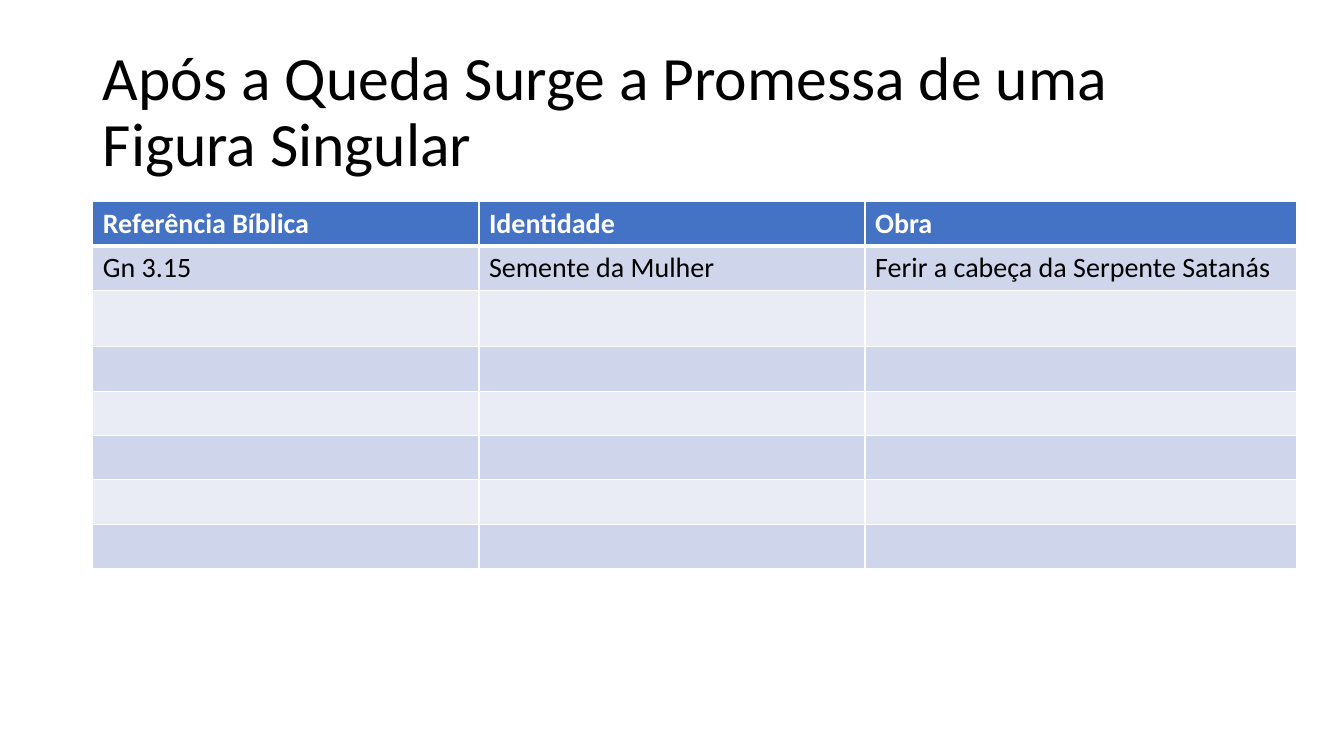
from lxml import etree
from pptx import Presentation
from pptx.dml.color import RGBColor
from pptx.enum.text import MSO_ANCHOR, PP_ALIGN
from pptx.oxml.ns import qn
from pptx.util import Inches, Pt

MIDDLE = MSO_ANCHOR.MIDDLE
LEFT = PP_ALIGN.LEFT
TITLE_ONLY = 5
FONT = "Calibri"
COLORS = {
    "text": "000000",
    "header_text": "FFFFFF",
    "header": "4472C4",
    "odd_row": "CFD5EA",
    "even_row": "E9EBF5",
    "border": "FFFFFF",
}

TITLE = "Após a Queda Surge a Promessa de uma Figura Singular"
HEADINGS = ["Referência Bíblica", "Identidade", "Obra"]
PROMISE = ["Gn 3.15", "Semente da Mulher", "Ferir a cabeça da Serpente Satanás"]
EMPTY_ROWS = 6
COLUMN_WIDTHS = [3.83, 3.83, 4.28]
ROW_HEIGHTS = [0.44, 0.44, 0.56] + [0.44] * 5


class SlideBuilder:
    def __init__(self, presentation):
        self.slide = presentation.slides.add_slide(
            presentation.slide_layouts[TITLE_ONLY])

    def format_text(self, paragraph, size, color, bold=False):
        for run in paragraph.runs:
            run.font.name = FONT
            run.font.size = Pt(size)
            run.font.bold = bold
            run.font.color.rgb = RGBColor.from_string(COLORS[color])

    def title(self, text, left, top, width, height):
        title = self.slide.shapes.title
        title.left, title.top = Inches(left), Inches(top)
        title.width, title.height = Inches(width), Inches(height)
        frame = title.text_frame
        frame.text = text
        frame.word_wrap = True
        frame.vertical_anchor = MIDDLE
        paragraph = frame.paragraphs[0]
        paragraph.alignment = LEFT
        paragraph.line_spacing = 0.9
        self.format_text(paragraph, 44, "text")

    def border(self, cell, side, width):
        properties = cell._tc.get_or_add_tcPr()
        line = etree.SubElement(properties, qn(f"a:ln{side}"), w=str(Pt(width)))
        fill = etree.SubElement(line, qn("a:solidFill"))
        etree.SubElement(fill, qn("a:srgbClr"), val=COLORS["border"])

    def cell(self, cell, text, row):
        """Style a cell by its row: header first, then alternating bands."""
        is_header = row == 0
        widths = {"L": 1, "R": 1, "T": 3 if row == 1 else 1,
                  "B": 3 if is_header else 1}
        for side, width in widths.items():
            self.border(cell, side, width)
        band = "header" if is_header else "odd_row" if row % 2 else "even_row"
        cell.fill.solid()
        cell.fill.fore_color.rgb = RGBColor.from_string(COLORS[band])
        if text:
            cell.text_frame.text = text
            self.format_text(cell.text_frame.paragraphs[0], 20,
                             "header_text" if is_header else "text", is_header)

    def table(self, rows, left, top, column_widths, row_heights):
        table = self.slide.shapes.add_table(
            len(rows), len(column_widths), Inches(left), Inches(top),
            Inches(sum(column_widths)), Inches(sum(row_heights))).table
        for column, width in zip(table.columns, column_widths):
            column.width = Inches(width)
        for row, height in zip(table.rows, row_heights):
            row.height = Inches(height)
        for row, texts in enumerate(rows):
            for column, text in enumerate(texts):
                self.cell(table.cell(row, column), text, row)


def main():
    presentation = Presentation()
    presentation.slide_width = Inches(13.33)
    presentation.slide_height = Inches(7.5)
    builder = SlideBuilder(presentation)
    builder.title(TITLE, 0.92, 0.4, 11.5, 1.45)
    rows = [HEADINGS, PROMISE] + [[""] * len(HEADINGS)] * EMPTY_ROWS
    builder.table(rows, 0.92, 2, COLUMN_WIDTHS, ROW_HEIGHTS)
    presentation.save("out.pptx")


if __name__ == "__main__":
    main()
